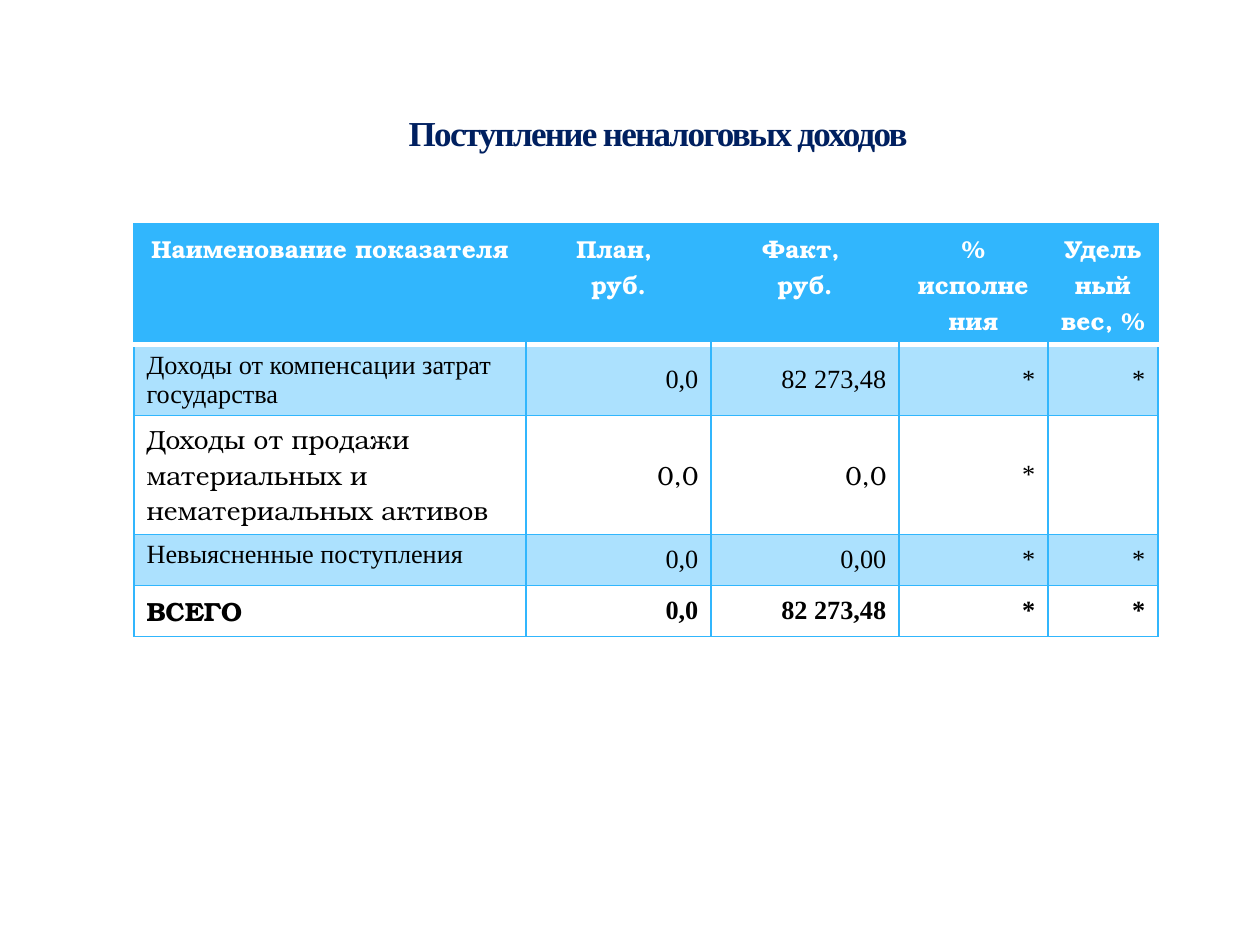
"""Build a slide with a table of non-tax revenues."""
from lxml import etree
from pptx import Presentation
from pptx.dml.color import RGBColor
from pptx.enum.text import MSO_ANCHOR, PP_ALIGN
from pptx.oxml.ns import qn
from pptx.util import Emu, Pt

LEFT, CENTER, RIGHT = PP_ALIGN.LEFT, PP_ALIGN.CENTER, PP_ALIGN.RIGHT
TOP, MIDDLE = MSO_ANCHOR.TOP, MSO_ANCHOR.MIDDLE
NAVY = RGBColor(0x00, 0x20, 0x60)
BLUE = RGBColor(0x31, 0xB6, 0xFD)
PALE = RGBColor(0xAF, 0xCC, 0xDE)
WHITE = RGBColor(0xFF, 0xFF, 0xFF)
BLACK = RGBColor(0x00, 0x00, 0x00)
SERIF, BOOK = "Times New Roman", "TeX Gyre Bonum"

COLS = [392, 185, 188, 149, 110]
HEADER = ["Наименование показателя", "План, \nруб.", "Факт, \nруб.",
          "% исполнения", "Удельный вес, %"]
BODY = [
    ["Доходы от компенсации затрат государства", "0,0", "82 273,48", "*", "*"],
    ["Доходы от продажи материальных и нематериальных активов", "0,0", "0,0", "*", ""],
    ["Невыясненные поступления", "0,0", "0,00", "*", "*"],
    ["ВСЕГО", "0,0", "82 273,48", "*", "*"],
]
ROWS = [120, 71, 119, 51, 51]
BOOK_CELLS = {(2, 0), (2, 1), (2, 2), (4, 0)}


def px(n):
    """Turn pixels into EMU."""
    return Emu(round(n * 914400 / 126))


def add_solid(parent, color, alpha=100):
    """Append a solid fill to an XML element."""
    fill = etree.SubElement(parent, qn("a:solidFill"))
    clr = etree.SubElement(fill, qn("a:srgbClr"), val=str(color))
    if alpha < 100:
        etree.SubElement(clr, qn("a:alpha"), val=str(alpha * 1000))


def write(tf, text, font=SERIF, size=15, color=BLACK, bold=False, align=LEFT):
    """Write text, one paragraph a line, and return the last run."""
    for i, line in enumerate(text.split("\n")):
        p = tf.add_paragraph() if i else tf.paragraphs[0]
        p.alignment = align
        r = p.add_run()
        r.text = line
        r.font.name, r.font.size, r.font.bold = font, Pt(size), bold
        r.font.color.rgb = color
    return r


def set_border(cell, side, color, width=1):
    """Draw one side of a cell, or hide it when color is None."""
    ln = etree.SubElement(cell._tc.get_or_add_tcPr(), qn(f"a:ln{side}"),
                          w=str(Pt(width)))
    if color is None:
        etree.SubElement(ln, qn("a:noFill"))
    else:
        add_solid(ln, color)


def set_fill(cell, color, alpha=100):
    """Fill a cell, or leave it clear when color is None."""
    if color is None:
        cell.fill.background()
    else:
        add_solid(cell._tc.get_or_add_tcPr(), color, alpha)


def add_title(s, text):
    """Format the title placeholder."""
    title = s.shapes.title
    title.left, title.top, title.width, title.height = map(px, (174, 86, 968, 93))
    title.text_frame.vertical_anchor = MIDDLE
    r = write(title.text_frame, text, size=20, color=NAVY, bold=True, align=CENTER)
    rpr = r.font._element
    rpr.set("spc", "-100")
    ln = etree.Element(qn("a:ln"), w=str(Pt(0.25)))
    add_solid(ln, PALE, 25)
    rpr.insert(0, ln)


def format_header(cell, text, col):
    """Write a header cell."""
    set_border(cell, "L", None if col else BLUE)
    set_border(cell, "R", BLUE if col == len(COLS) - 1 else None)
    set_border(cell, "T", BLUE)
    set_border(cell, "B", WHITE, 3)
    set_fill(cell, BLUE)
    write(cell.text_frame, text, BOOK, 14, WHITE, True, CENTER)


def format_body(cell, text, row, col):
    """Write a body cell."""
    for side in "LR":
        set_border(cell, side, BLUE)
    if row == 1:
        set_border(cell, "T", WHITE, 3)
    else:
        set_border(cell, "T", BLUE)
    set_border(cell, "B", BLUE)
    set_fill(cell, BLUE if row % 2 else None, 40)
    cell.vertical_anchor = MIDDLE if col else TOP
    if text:
        write(cell.text_frame, text, BOOK if (row, col) in BOOK_CELLS else SERIF,
              bold=row == len(BODY), align=RIGHT if col else LEFT)


def add_revenue_table(s):
    """Add the revenue table."""
    frame = s.shapes.add_table(len(ROWS), len(COLS), px(134), px(224),
                               px(sum(COLS)), px(sum(ROWS)))
    table = frame.table
    table.horz_banding = False
    for column, width in zip(table.columns, COLS):
        column.width = px(width)
    for row, height in zip(table.rows, ROWS):
        row.height = px(height)
    for j, text in enumerate(HEADER):
        format_header(table.cell(0, j), text, j)
    for i, values in enumerate(BODY, 1):
        for j, text in enumerate(values):
            format_body(table.cell(i, j), text, i, j)


def main():
    """Build and save the slide."""
    prs = Presentation()
    prs.slide_width, prs.slide_height = px(1260), px(945)
    s = prs.slides.add_slide(prs.slide_layouts[5])
    add_revenue_table(s)
    add_title(s, "Поступление неналоговых доходов")
    prs.save("out.pptx")


if __name__ == "__main__":
    main()
